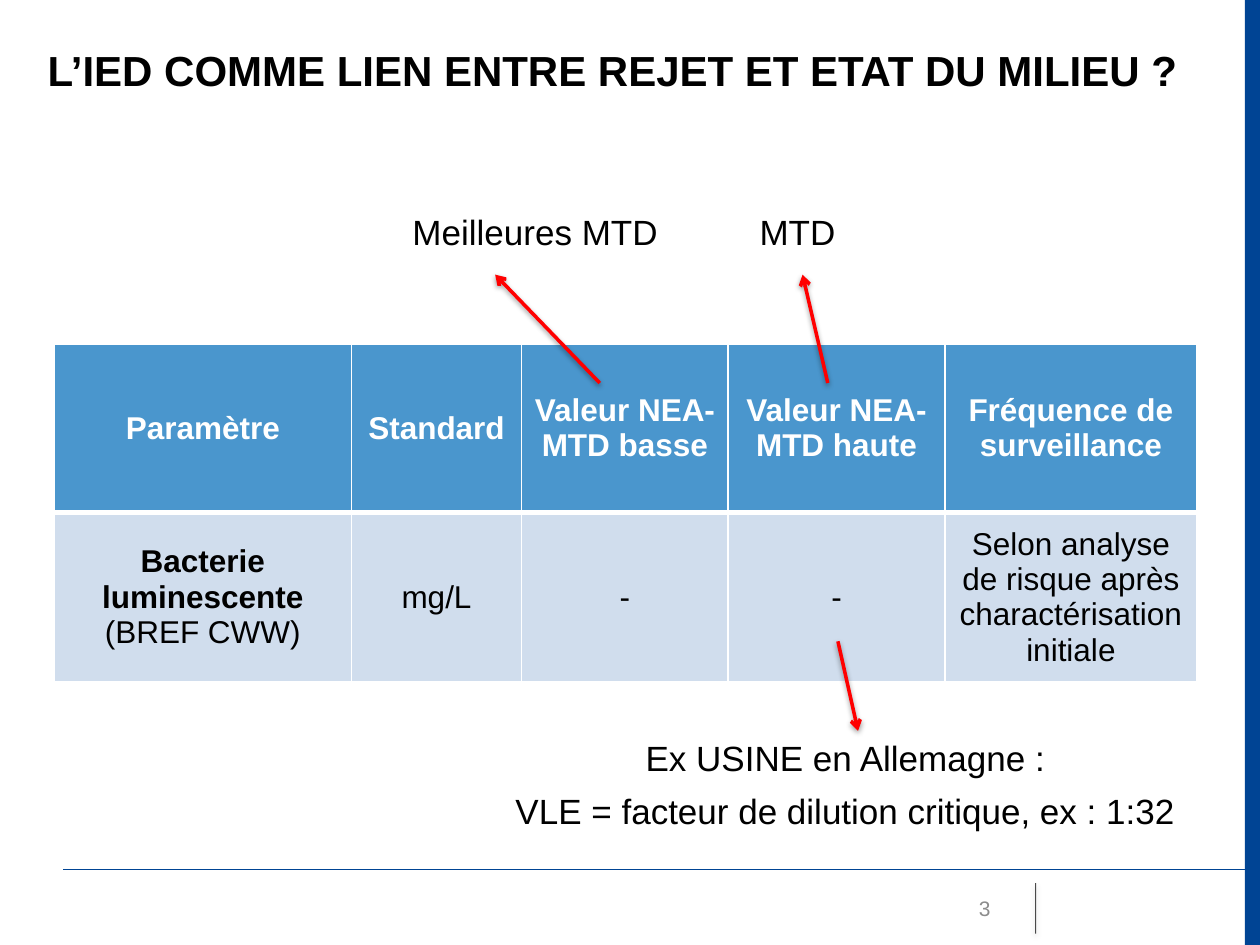
from lxml import etree
from pptx import Presentation
from pptx.dml.color import RGBColor
from pptx.enum.shapes import MSO_CONNECTOR, MSO_SHAPE
from pptx.enum.text import MSO_ANCHOR, PP_ALIGN
from pptx.oxml.ns import qn
from pptx.util import Inches, Pt

LEFT, MID, RIGHT = PP_ALIGN.LEFT, PP_ALIGN.CENTER, PP_ALIGN.RIGHT
TOP, HALF = MSO_ANCHOR.TOP, MSO_ANCHOR.MIDDLE
LINE, RECT = MSO_CONNECTOR.STRAIGHT, MSO_SHAPE.RECTANGLE

WIDE, HIGH = Inches(10), Inches(7.5)
COLS, ROWS = 100, 75
BLUE, RED, BLACK, WHITE, GREY = "004494", "FF0000", "000000", "FFFFFF", "8C8C8C"
HEAD, BODY = "4A96CD", "D0DDED"
FONT = "Arial"
WIDTHS = [23.6, 13.5, 16.4, 17.2, 20]
DEPTH = 13.4
TITLES = ["Paramètre", "Standard", "Valeur NEA-MTD basse",
          "Valeur NEA-MTD haute", "Fréquence de surveillance"]
VALUES = ["mg/L", "-", "-",
          "Selon analyse de risque après charactérisation initiale"]


def col(n):
    return round(WIDE * n / COLS)


def row(n):
    return round(HIGH * n / ROWS)


def box(x, y, w, h):
    return col(x), row(y), col(w), row(h)


def tint(code):
    return RGBColor.from_string(code)


def sub(node, tag, **attrs):
    return etree.SubElement(node, qn(tag), attrs)


def add_run(para, text, size, code=BLACK, bold=False):
    run = para.add_run()
    run.text = text
    font = run.font
    font.name, font.size, font.bold = FONT, Pt(size), bold
    font.color.rgb = tint(code)


def add_text(slide, place, lines, size, align=LEFT, code=BLACK,
             bold=False, anchor=TOP, hang=False):
    """Add a text box; hang gives the hanging indent and spacing of the notes."""
    frame = slide.shapes.add_textbox(*box(*place)).text_frame
    frame.word_wrap = True
    frame.vertical_anchor = anchor
    for i, text in enumerate(lines):
        para = frame.add_paragraph() if i else frame.paragraphs[0]
        para.alignment = align
        if hang:
            props = para._p.get_or_add_pPr()
            props.set("marL", str(col(3.1)))
            props.set("indent", str(-col(3.1)))
            para.space_after = Pt(3)
            if i:
                para.space_before = Pt(3)
        add_run(para, text, size, code, bold)


def add_line(slide, start, end, code, width, shade=False, arrow=False):
    """Draw a straight line, with an optional soft shadow and end arrow."""
    line = slide.shapes.add_connector(
        LINE, col(start[0]), row(start[1]), col(end[0]), row(end[1]))
    line.line.color.rgb = tint(code)
    line.line.width = Pt(width)
    if arrow:
        sub(line.line._get_or_add_ln(), "a:tailEnd", type="arrow")
    effect = sub(line._element.spPr, "a:effectLst")
    if shade:
        cast = sub(effect, "a:outerShdw", blurRad=str(Pt(3.1)),
                   dist=str(Pt(1.6)), dir="5400000", rotWithShape="0")
        sub(sub(cast, "a:srgbClr", val=BLACK), "a:alpha", val="38000")
    return line


def add_edges(cell, top, base):
    """Give a cell white borders; top and base are widths in points."""
    props = cell._tc.get_or_add_tcPr()
    sides = [("a:lnL", 1), ("a:lnR", 1), ("a:lnT", top), ("a:lnB", base)]
    for i, (tag, width) in enumerate(sides):
        edge = etree.Element(qn(tag), w=str(Pt(width)))
        sub(sub(edge, "a:solidFill"), "a:srgbClr", val=WHITE)
        props.insert(i, edge)


def set_cell(cell, fill, runs, code, top, base):
    """Fill a cell; each (text, bold) run starts a new line."""
    cell.fill.solid()
    cell.fill.fore_color.rgb = tint(fill)
    cell.vertical_anchor = HALF
    para = cell.text_frame.paragraphs[0]
    para.alignment = MID
    for i, (text, bold) in enumerate(runs):
        if i:
            para.add_line_break()
        add_run(para, text, 18, code, bold)
    add_edges(cell, top, base)


def add_grid(slide):
    place = box(4.3, 27.3, sum(WIDTHS), 2 * DEPTH)
    table = slide.shapes.add_table(2, len(WIDTHS), *place).table
    for column, width in zip(table.columns, WIDTHS):
        column.width = col(width)
    for line in table.rows:
        line.height = row(DEPTH)
    for i, text in enumerate(TITLES):
        set_cell(table.cell(0, i), HEAD, [(text, True)], WHITE, 1, 3)
    first = [("Bacterie luminescente", True), ("(BREF CWW)", False)]
    for i, runs in enumerate([first] + [[(text, False)] for text in VALUES]):
        set_cell(table.cell(1, i), BODY, runs, BLACK, 3, 1)


def add_frame(slide):
    """Draw the side band, the footer rules and the page number."""
    band = slide.shapes.add_shape(RECT, *box(98.8, 0, 1.2, ROWS))
    band.shadow.inherit = False
    band.fill.solid()
    band.fill.fore_color.rgb = tint(BLUE)
    band.line.fill.background()
    add_line(slide, (5, 69), (COLS, 69), BLUE, 0.75)
    rule = add_line(slide, (82.2, 70.1), (82.2, 74.1), BLACK, 0.5, shade=True)
    paint = rule.line._get_or_add_ln().find(".//" + qn("a:srgbClr"))
    sub(paint, "a:alpha", val="70000")
    add_text(slide, (71.7, 70.1, 7.9, 4), ["3"], 12, RIGHT, GREY, anchor=HALF)


def main():
    deck = Presentation()
    deck.slide_width, deck.slide_height = WIDE, HIGH
    slide = deck.slides.add_slide(deck.slide_layouts[6])
    add_frame(slide)
    add_text(slide, (2.8, 3, 92.4, 6.9),
             ["L’IED COMME LIEN ENTRE REJET ET ETAT DU MILIEU ?"], 24, bold=True)
    add_grid(slide)
    add_text(slide, (39.3, 58, 55.6, 8.7),
             ["Ex USINE en Allemagne :",
              "VLE = facteur de dilution critique, ex : 1:32"], 20, MID, hang=True)
    add_text(slide, (25.5, 16.2, 27.7, 5.5), ["Meilleures MTD"], 20, RIGHT, hang=True)
    add_text(slide, (59.3, 16.2, 8.8, 5.5), ["MTD"], 20, hang=True)
    for start, end in [((66.5, 50.9), (68.1, 58)),
                       ((47.6, 30.4), (39.3, 21.8)),
                       ((65.7, 30.4), (63.7, 21.8))]:
        add_line(slide, start, end, RED, 2, shade=True, arrow=True)
    deck.save("out.pptx")


if __name__ == "__main__":
    main()
